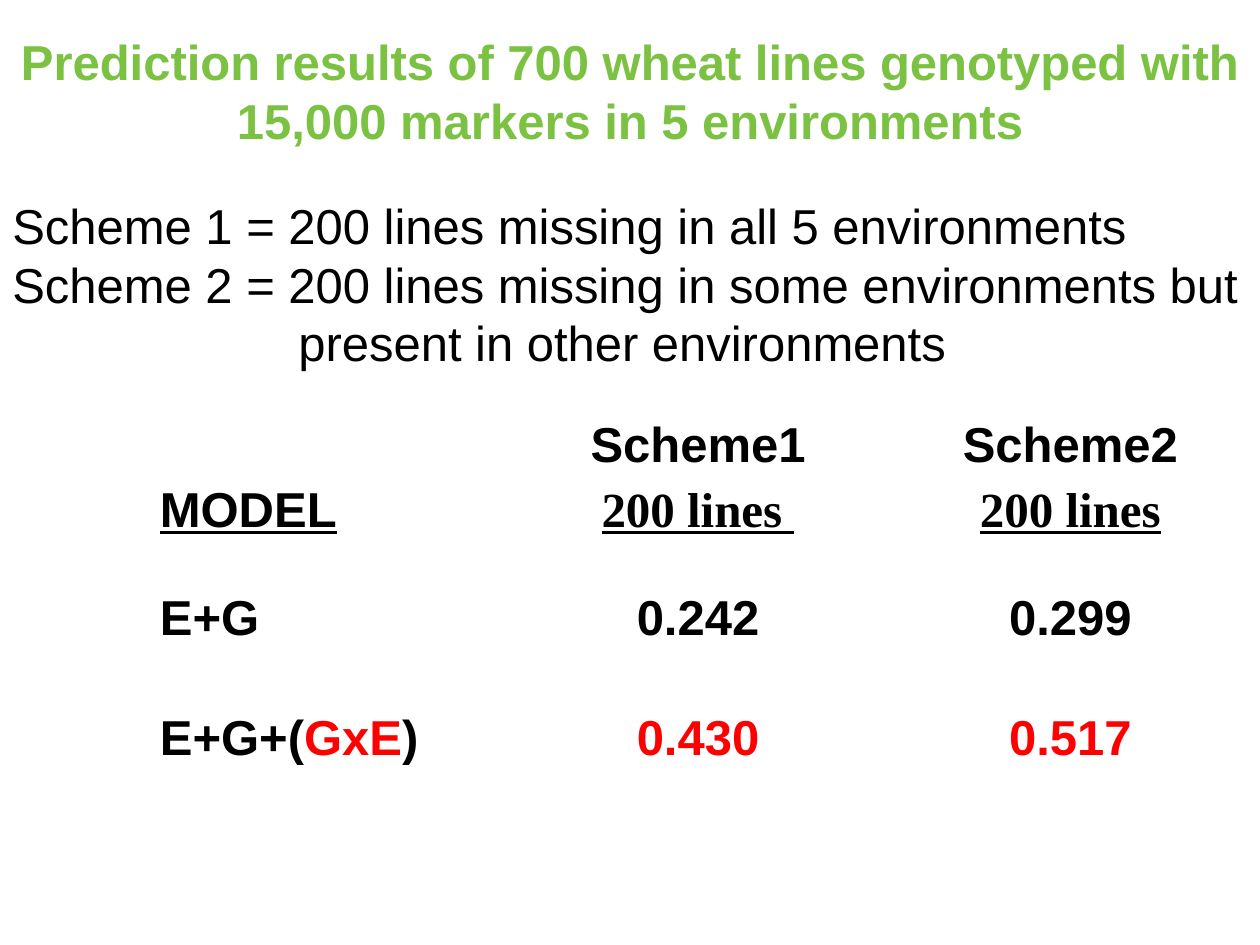
from dataclasses import dataclass

import lxml.etree
import pptx
import pptx.dml.color
import pptx.enum.text
import pptx.oxml.ns
import pptx.util

Inches, Pt = pptx.util.Inches, pptx.util.Pt
ALIGN = pptx.enum.text.PP_ALIGN
ANCHOR = pptx.enum.text.MSO_ANCHOR
COLOURS = {"title": "7BC142", "text": "000000", "highlight": "FF0000", "paper": "FFFFFF"}
COLUMN_WIDTHS = (2.58, 3.64, 2.27)
ROW_HEIGHTS = (0.99, 0.86, 0.95)


@dataclass
class Span:
    text: str
    colour: str = "text"
    bold: bool = True
    underline: bool = False
    font: str = "Arial"


@dataclass
class Line:
    spans: list[Span]
    align: ALIGN = ALIGN.CENTER
    margin: float = 0
    indent: float = 0
    before: float = 0
    after: float = 0


def rgb(name: str) -> pptx.dml.color.RGBColor:
    return pptx.dml.color.RGBColor.from_string(COLOURS[name])


def write_lines(frame, lines: list[Line]) -> None:
    for number, line in enumerate(lines):
        para = frame.add_paragraph() if number else frame.paragraphs[0]
        spacing = {"alignment": line.align, "space_after": Pt(line.after),
                   "space_before": Pt(line.before if number else 0)}
        for name, value in spacing.items():
            setattr(para, name, value)
        properties = para._p.get_or_add_pPr()
        properties.set("marL", str(Inches(line.margin)))
        properties.set("indent", str(Inches(line.indent)))
        for span in line.spans:
            run = para.add_run()
            run.text = span.text
            style = {"name": span.font, "size": Pt(28), "bold": span.bold,
                     "underline": span.underline}
            for name, value in style.items():
                setattr(run.font, name, value)
            run.font.color.rgb = rgb(span.colour)


def add_text(page, place: tuple[float, ...], lines: list[Line], anchor: ANCHOR) -> None:
    box = page.shapes.add_textbox(*map(Inches, place))
    box.text_frame.word_wrap = True
    box.text_frame.vertical_anchor = anchor
    write_lines(box.text_frame, lines)


def add_borders(cell, bottom: float) -> None:
    """Draw paper-coloured cell edges; they must come before the fill."""
    properties = cell._tc.get_or_add_tcPr()
    for edge, width in {"lnL": 1, "lnR": 1, "lnT": 1, "lnB": bottom}.items():
        line = lxml.etree.SubElement(properties, pptx.oxml.ns.qn(f"a:{edge}"), w=str(Pt(width)))
        fill = lxml.etree.SubElement(line, pptx.oxml.ns.qn("a:solidFill"))
        lxml.etree.SubElement(fill, pptx.oxml.ns.qn("a:srgbClr"), val=COLOURS["paper"])


def add_results(page, rows: list[list[list[list[Span]]]]) -> None:
    """Add the table; each cell is a list of lines, each line a list of spans."""
    table = page.shapes.add_table(
        len(rows), len(COLUMN_WIDTHS), Inches(1.08), Inches(3.25),
        Inches(sum(COLUMN_WIDTHS)), Inches(sum(ROW_HEIGHTS))).table
    for column, width in zip(table.columns, COLUMN_WIDTHS):
        column.width = Inches(width)
    for row, height in zip(table.rows, ROW_HEIGHTS):
        row.height = Inches(height)
    for row_number, row in enumerate(rows):
        for column_number, content in enumerate(row):
            cell = table.cell(row_number, column_number)
            layout = {"margin_left": Inches(0.07), "margin_right": Inches(0.07),
                      "margin_top": 0, "margin_bottom": 0,
                      "vertical_anchor": ANCHOR.BOTTOM}
            for name, value in layout.items():
                setattr(cell, name, value)
            add_borders(cell, bottom=1 if row_number else 3)
            cell.fill.solid()
            cell.fill.fore_color.rgb = rgb("paper")
            align = ALIGN.CENTER if column_number else ALIGN.JUSTIFY
            write_lines(cell.text_frame, [
                Line(spans, align, indent=0.12, before=2, after=4) for spans in content])


def scheme_heading(name: str, count: str) -> list[list[Span]]:
    return [[Span(name)], [Span(count, underline=True, font="Times New Roman")]]


def main() -> None:
    deck = pptx.Presentation()
    deck.slide_width, deck.slide_height = Inches(10), Inches(7.5)
    page = deck.slides.add_slide(deck.slide_layouts[6])

    title = Span("Prediction results of 700 wheat lines genotyped with "
                 "15,000 markers in 5 environments", "title")
    add_text(page, (0, 0.09, 10, 1.25), [Line([title])], ANCHOR.MIDDLE)

    add_results(page, [
        [[[Span("MODEL", underline=True)]],
         scheme_heading("Scheme1", "200 lines "),
         scheme_heading("Scheme2", "200 lines")],
        [[[Span("E+G")]], [[Span("0.242")]], [[Span("0.299")]]],
        [[[Span("E+G+("), Span("GxE", "highlight"), Span(")")]],
         [[Span("0.430", "highlight")]], [[Span("0.517", "highlight")]]],
    ])

    schemes = {
        "Scheme 1 = 200 lines missing in all 5 environments": 0,
        "Scheme 2 = 200 lines missing in some environments but": 0,
        "present in other environments": 2.27,
    }
    add_text(page, (0, 1.5, 10.07, 1.51), [
        Line([Span(text, bold=False)], ALIGN.LEFT, margin)
        for text, margin in schemes.items()], ANCHOR.TOP)

    deck.save("out.pptx")


if __name__ == "__main__":
    main()
